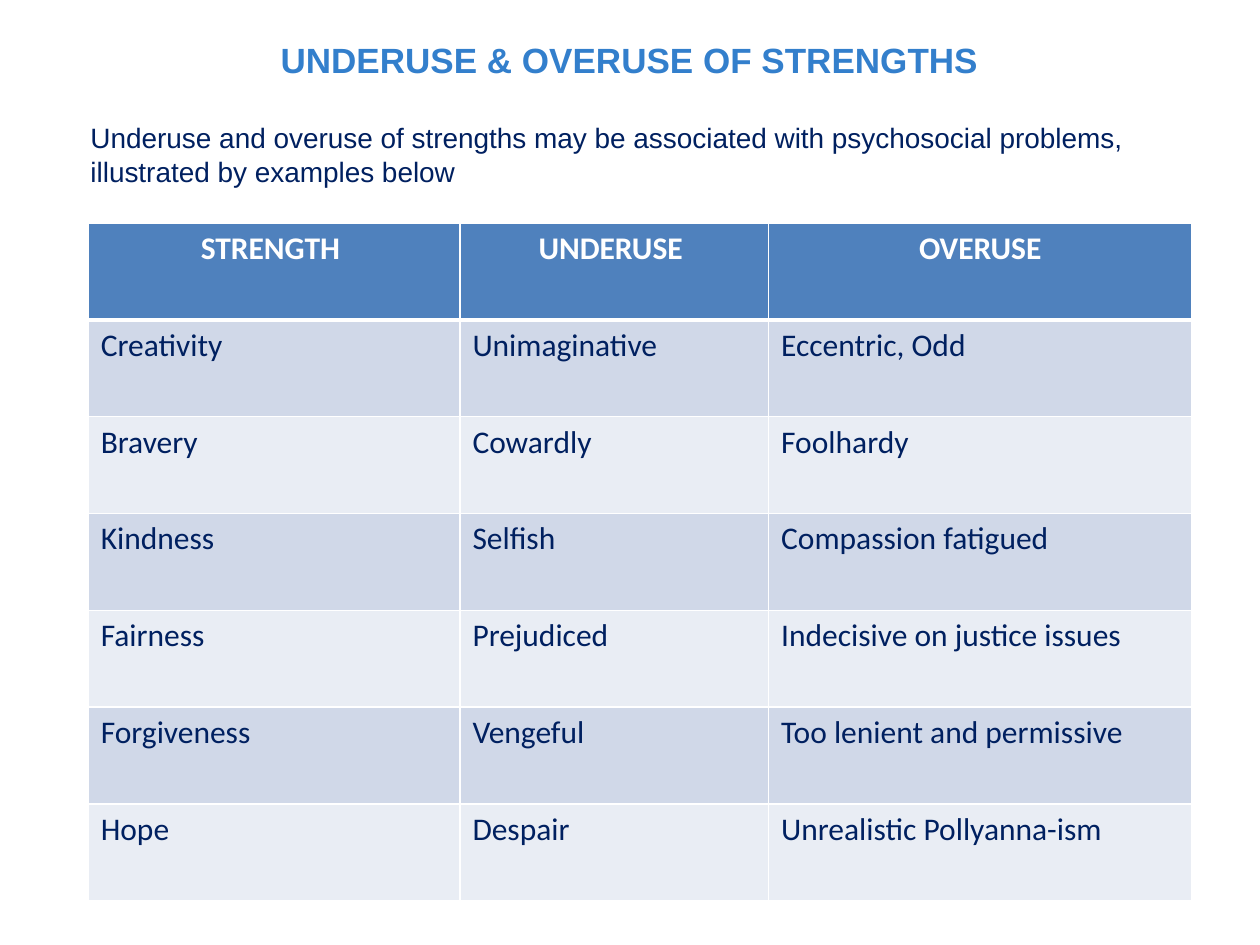
import dataclasses

import lxml.etree
import pptx
import pptx.dml.color
import pptx.enum.text
import pptx.oxml.ns
import pptx.util

Inches = pptx.util.Inches
Pt = pptx.util.Pt
RGBColor = pptx.dml.color.RGBColor
Align = pptx.enum.text.PP_ALIGN
Anchor = pptx.enum.text.MSO_ANCHOR
qn = pptx.oxml.ns.qn


@dataclasses.dataclass(frozen=True)
class Theme:
    heading_font: str = "Arial"
    table_font: str = "Calibri"
    title_size: int = 20
    intro_size: int = 16
    table_size: int = 18
    title: str = "337FCC"
    ink: str = "002060"
    header_ink: str = "FFFFFF"
    header_fill: str = "4F81BD"
    bands: tuple = ("D0D8E8", "E9EDF4")
    rule: str = "FFFFFF"
    rule_width: int = 1
    header_rule_width: int = 3


THEME = Theme()

HEADINGS = ("STRENGTH ", "UNDERUSE ", "OVERUSE")
EXAMPLES = (
    ("Creativity", "Unimaginative", "Eccentric, Odd"),
    ("Bravery", "Cowardly", "Foolhardy"),
    ("Kindness", "Selfish", "Compassion fatigued"),
    ("Fairness", "Prejudiced", "Indecisive on justice issues"),
    ("Forgiveness", "Vengeful", "Too lenient and permissive"),
    ("Hope", "Despair", "Unrealistic Pollyanna-ism"),
)
COLUMN_WIDTHS = (2.95, 2.45, 3.36)


def style(paragraph, font, size, color, bold=False, align=Align.LEFT):
    paragraph.alignment = align
    paragraph.font.name = font
    paragraph.font.size = Pt(size)
    paragraph.font.bold = bold
    paragraph.font.color.rgb = RGBColor.from_string(color)


def rule_cell(cell, top_width, bottom_width):
    """Draw the cell's four borders; call before filling the cell."""
    properties = cell._tc.get_or_add_tcPr()
    widths = {"a:lnL": THEME.rule_width, "a:lnR": THEME.rule_width,
              "a:lnT": top_width, "a:lnB": bottom_width}
    for side, width in widths.items():
        line = lxml.etree.SubElement(properties, qn(side), w=str(Pt(width)))
        paint = lxml.etree.SubElement(line, qn("a:solidFill"))
        lxml.etree.SubElement(paint, qn("a:srgbClr"), val=THEME.rule)


def place_title(slide, left, top, width, height):
    title = slide.shapes.title
    title.left, title.top, title.width, title.height = left, top, width, height
    frame = title.text_frame
    frame.text = "UNDERUSE & OVERUSE OF STRENGTHS"
    frame.word_wrap = True
    frame.margin_left = frame.margin_right = 0
    frame.auto_size = pptx.enum.text.MSO_AUTO_SIZE.NONE
    frame.vertical_anchor = Anchor.BOTTOM
    heading = frame.paragraphs[0]
    heading.line_spacing = 1.1
    style(heading, THEME.heading_font, THEME.title_size, THEME.title, True, Align.CENTER)


def place_intro(slide, left, top, width, height):
    frame = slide.shapes.add_textbox(left, top, width, height).text_frame
    frame.word_wrap = True
    frame.text = ("Underuse and overuse of strengths may be associated with "
                  "psychosocial problems, illustrated by examples below")
    style(frame.paragraphs[0], THEME.heading_font, THEME.intro_size, THEME.ink)


def place_examples(slide, left, top, width, height):
    rows = (HEADINGS,) + EXAMPLES
    table = slide.shapes.add_table(
        len(rows), len(HEADINGS), left, top, width, height).table
    for column, share in zip(table.columns, COLUMN_WIDTHS):
        column.width = int(width * share / sum(COLUMN_WIDTHS))
    for r, words in enumerate(rows):
        header = r == 0
        fill = THEME.header_fill if header else THEME.bands[(r - 1) % 2]
        ink = THEME.header_ink if header else THEME.ink
        align = Align.CENTER if header else Align.LEFT
        above = THEME.header_rule_width if r == 1 else THEME.rule_width
        below = THEME.header_rule_width if header else THEME.rule_width
        for c, word in enumerate(words):
            cell = table.cell(r, c)
            cell.text = word
            rule_cell(cell, above, below)
            cell.fill.solid()
            cell.fill.fore_color.rgb = RGBColor.from_string(fill)
            style(cell.text_frame.paragraphs[0], THEME.table_font,
                  THEME.table_size, ink, header, align)


def main():
    deck = pptx.Presentation()
    deck.slide_width, deck.slide_height = Inches(10), Inches(7.5)
    slide = deck.slides.add_slide(deck.slide_layouts.get_by_name("Title Only"))
    place_title(slide, Inches(2.13), Inches(0.23), Inches(5.73), Inches(0.46))
    place_examples(slide, Inches(0.7), Inches(1.77), Inches(8.76), Inches(5.38))
    place_intro(slide, Inches(0.62), Inches(0.91), Inches(8.76), Inches(0.64))
    deck.save("out.pptx")


if __name__ == "__main__":
    main()
